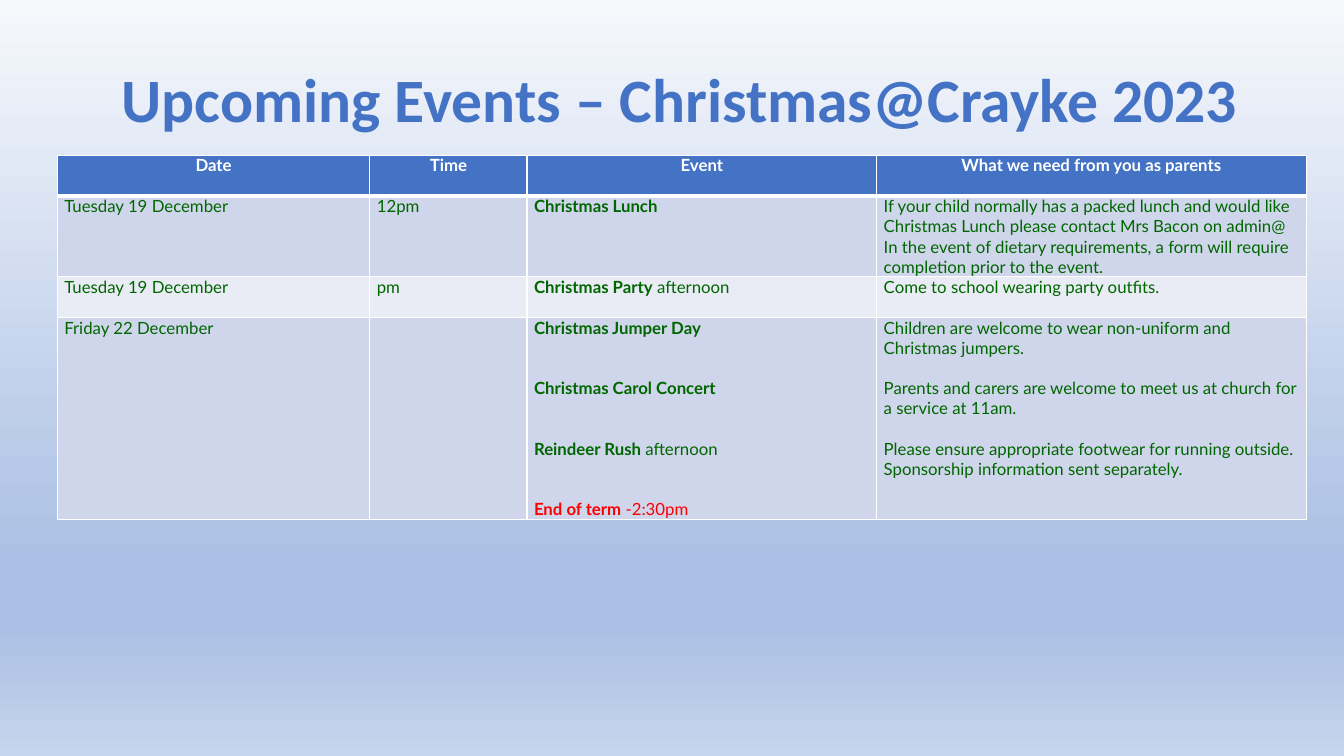
"""Build the slide of upcoming Christmas events."""
from typing import NamedTuple

from lxml.etree import SubElement
from pptx import Presentation
from pptx.dml.color import RGBColor
from pptx.enum.text import MSO_ANCHOR, PP_ALIGN
from pptx.oxml.ns import qn
from pptx.util import Pt


class Theme(NamedTuple):
    blue: str = "4472C4"
    white: str = "FFFFFF"
    green: str = "006600"
    red: str = "FF0000"
    bands: tuple = ("CFD5EA", "E9EBF5")
    backdrop: tuple = ((0, "F6F8FC"), (74, "ABC0E4"), (83, "ABC0E4"), (100, "C7D5ED"))
    title_font: str = "Calibri"
    table_font: str = "Lato"
    title_size: float = 44
    table_size: float = 12
    line_height: float = 14.4


class Line(NamedTuple):
    strong: str = ""
    plain: str = ""
    blank_lines: int = 0
    color: str = Theme().green


THEME = Theme()
TITLE = "Upcoming Events – Christmas@Crayke 2023"
HEADINGS = ("Date", "Time", "Event", "What we need from you as parents")
EVENTS = (
    (
        [Line(plain="Tuesday 19 December")],
        [Line(plain="12pm")],
        [Line("Christmas Lunch")],
        [
            Line(plain="If your child normally has a packed lunch and would like "
                       "Christmas Lunch please contact Mrs Bacon on admin@"),
            Line(plain="In the event of dietary requirements, a form will require "
                       "completion prior to the event."),
        ],
    ),
    (
        [Line(plain="Tuesday 19 December")],
        [Line(plain="pm")],
        [Line("Christmas Party", " afternoon")],
        [Line(plain="Come to school wearing party outfits.")],
    ),
    (
        [Line(plain="Friday 22 December")],
        [],
        [
            Line("Christmas Jumper Day"),
            Line("Christmas Carol Concert", blank_lines=2),
            Line("Reindeer Rush ", "afternoon", blank_lines=2),
            Line("End of term", " -2:30pm", blank_lines=2, color=THEME.red),
        ],
        [
            Line(plain="Children are welcome to wear non-uniform and Christmas jumpers."),
            Line(plain="Parents and carers are welcome to meet us at church for "
                       "a service at 11am.", blank_lines=1),
            Line(plain="Please ensure appropriate footwear for running outside.",
                 blank_lines=1),
            Line(plain="Sponsorship information sent separately."),
        ],
    ),
)
COLUMN_WIDTHS = (223.2, 112.3, 249.8, 306.7)
ROW_HEIGHTS = (29.2, 57.6, 29.2, 143.7)
TABLE_LEFT, TABLE_TOP = 41, 110.9


def write(paragraph, text, *, font=THEME.table_font, size=THEME.table_size,
          color=THEME.green, bold=False):
    run = paragraph.add_run()
    run.text = text
    run.font.name = font
    run.font.size = Pt(size)
    run.font.bold = bold
    run.font.color.rgb = RGBColor.from_string(color)


def add_color(parent, color):
    SubElement(parent, qn("a:srgbClr"), val=color)


def paint_backdrop(slide):
    fill = slide.background.fill
    fill.gradient()
    fill.gradient_angle = 270
    stops = next(slide.element.iter(qn("a:gsLst")))
    for stop in list(stops):
        stops.remove(stop)
    for percent, color in THEME.backdrop:
        add_color(SubElement(stops, qn("a:gs"), pos=str(percent * 1000)), color)


def style_cell(cell, fill, bottom_width=1):
    cell.margin_left = cell.margin_right = Pt(5)
    cell.margin_top = cell.margin_bottom = Pt(0)
    properties = cell._tc.get_or_add_tcPr()
    for side, width in (("L", 1), ("R", 1), ("T", 1), ("B", bottom_width)):
        border = SubElement(properties, qn(f"a:ln{side}"), w=str(Pt(width)))
        add_color(SubElement(border, qn("a:solidFill")), THEME.white)
    cell.fill.solid()
    cell.fill.fore_color.rgb = RGBColor.from_string(fill)


def fill_event_cell(cell, lines):
    frame = cell.text_frame
    for index, line in enumerate(lines):
        paragraph = frame.add_paragraph() if index else frame.paragraphs[0]
        paragraph.space_before = Pt(line.blank_lines * THEME.line_height)
        for text, bold in ((line.strong, True), (line.plain, False)):
            if text:
                write(paragraph, text, color=line.color, bold=bold)


def add_title(slide):
    frame = slide.shapes.add_textbox(Pt(79.9), Pt(20.9), Pt(828), Pt(104.4)).text_frame
    frame.word_wrap = True
    frame.vertical_anchor = MSO_ANCHOR.MIDDLE
    heading = frame.paragraphs[0]
    heading.line_spacing = 0.9
    write(heading, TITLE, font=THEME.title_font, size=THEME.title_size,
          color=THEME.blue, bold=True)


def add_events(slide):
    events = slide.shapes.add_table(
        len(ROW_HEIGHTS), len(COLUMN_WIDTHS), Pt(TABLE_LEFT), Pt(TABLE_TOP),
        Pt(sum(COLUMN_WIDTHS)), Pt(sum(ROW_HEIGHTS))).table
    for column, width in zip(events.columns, COLUMN_WIDTHS):
        column.width = Pt(width)
    for row, height in zip(events.rows, ROW_HEIGHTS):
        row.height = Pt(height)
    for column, heading in enumerate(HEADINGS):
        cell = events.cell(0, column)
        style_cell(cell, THEME.blue, bottom_width=3)
        paragraph = cell.text_frame.paragraphs[0]
        paragraph.alignment = PP_ALIGN.CENTER
        write(paragraph, heading, color=THEME.white, bold=True)
    for row, event in enumerate(EVENTS, start=1):
        for column, lines in enumerate(event):
            cell = events.cell(row, column)
            style_cell(cell, THEME.bands[(row - 1) % 2], bottom_width=1)
            fill_event_cell(cell, lines)


def main():
    deck = Presentation()
    deck.slide_width, deck.slide_height = Pt(960), Pt(540)
    slide = deck.slides.add_slide(deck.slide_layouts[6])
    paint_backdrop(slide)
    add_title(slide)
    add_events(slide)
    deck.save("out.pptx")


if __name__ == "__main__":
    main()
